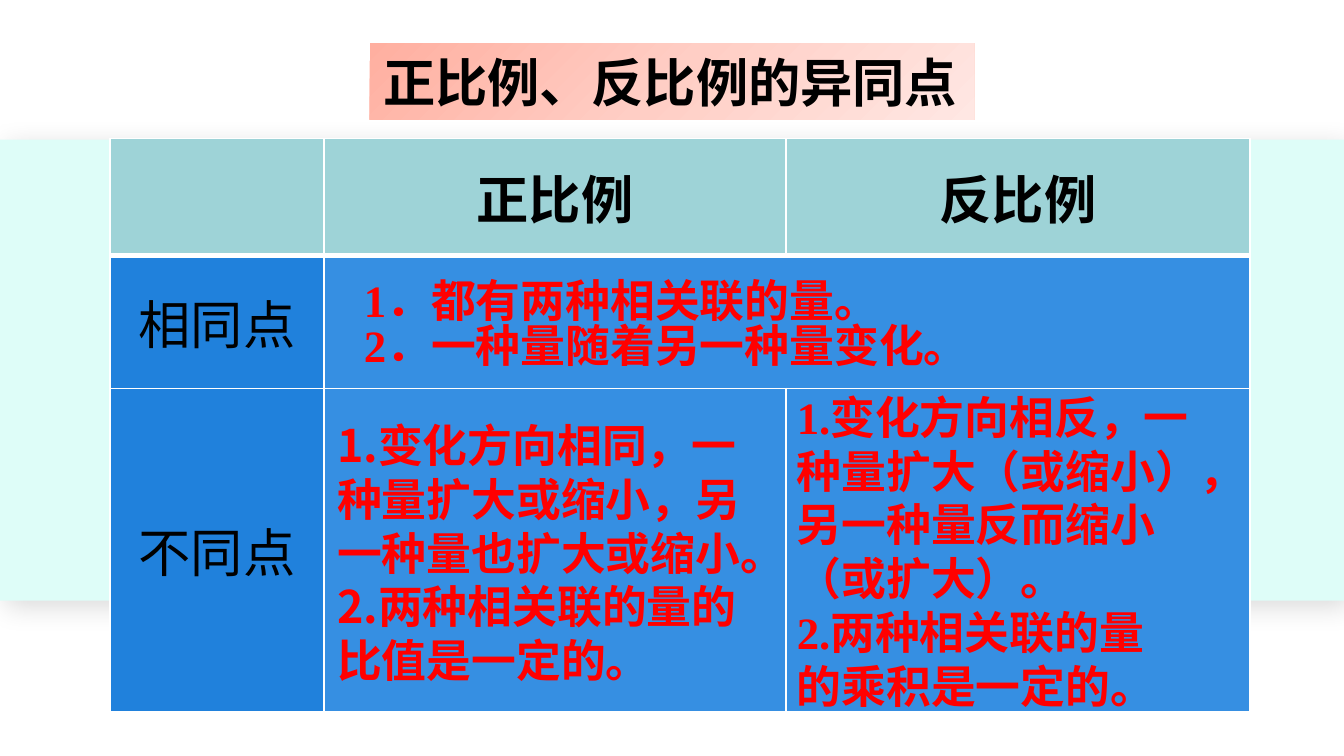
from dataclasses import dataclass

from pptx import Presentation
from pptx.dml.color import RGBColor
from pptx.enum.lang import MSO_LANGUAGE_ID as Lang
from pptx.enum.shapes import MSO_SHAPE as Preset
from pptx.enum.text import MSO_ANCHOR as Anchor, MSO_AUTO_SIZE as AutoSize, PP_ALIGN as Align
from pptx.oxml import parse_xml
from pptx.oxml.ns import nsdecls
from pptx.util import Inches, Pt


@dataclass(frozen=True)
class Theme:
    font: str = "Times New Roman"
    heading_size: int = 28
    answer_size: int = 24
    ink: str = "000000"
    answer: str = "FF0000"
    band: str = "DEFDF8"
    header: str = "9ED3D7"
    label: str = "2081DC"
    body: str = "368FE2"
    border: str = "FFFFFF"
    title_stops: tuple = ((0, "FFAFA0"), (50, "FFCEC5"), (100, "FFE7E3"))


@dataclass(frozen=True)
class Box:
    left: float
    top: float
    width: float
    height: float

    def emu(self):
        return tuple(Inches(n) for n in (self.left, self.top, self.width, self.height))


@dataclass(frozen=True)
class Answer:
    """Paragraphs laid over a table cell; each paragraph is a tuple of lines."""
    box: Box
    paragraphs: tuple
    line_pitch: int | None = None
    align: Align = Align.LEFT
    numbered: bool = False


THEME = Theme()
SLIDE_WIDTH = 10
SLIDE_HEIGHT = SLIDE_WIDTH * 9 / 16
COLUMNS = (1.59, 3.44, 3.45)
ROWS = (0.87, 0.99, 2.41)
LABELS = (("", "正比例", "反比例"), ("相同点", "", ""), ("不同点", "", ""))
ANSWERS = (
    Answer(Box(2.61, 2.05, 6.04, 0.77),
           (("1．都有两种相关联的量。",), ("2．一种量随着另一种量变化。",)),
           line_pitch=24, align=Align.JUSTIFY),
    Answer(Box(2.41, 3.06, 3.41, 2.12),
           (("变化方向相同，一种量扩大或缩小，另一种量也扩大或缩小。",),
            ("两种相关联的量的比值是一定的。",)),
           numbered=True),
    Answer(Box(5.83, 2.85, 3.48, 2.42),
           (("1.变化方向相反，一",),
            ("种量扩大（或缩小），另一种量反而缩小（或扩大）。",),
            ("2.两种相关联的量", "的乘积是一定的。"))),
)


def add_run(paragraph, text: str, size: int, color: str, bold: bool = True) -> None:
    run = paragraph.add_run()
    run.text = text
    font = run.font
    font.name, font.size, font.bold = THEME.font, Pt(size), bold
    font.color.rgb = RGBColor.from_string(color)
    font.language_id = Lang.SIMPLIFIED_CHINESE


def fill_solid(target, color: str) -> None:
    target.fill.solid()
    target.fill.fore_color.rgb = RGBColor.from_string(color)


def draw_band(slide) -> None:
    band = slide.shapes.add_shape(Preset.RECTANGLE, *Box(0, 1.04, SLIDE_WIDTH, 3.43).emu())
    fill_solid(band, THEME.band)
    band.line.fill.background()
    band._element.spPr.append(parse_xml(
        f'<a:effectLst {nsdecls("a")}><a:outerShdw blurRad="{Pt(15)}" dist="{Pt(5)}" '
        'dir="2700000" algn="ctr" rotWithShape="0"><a:srgbClr val="000000">'
        '<a:alpha val="15000"/></a:srgbClr></a:outerShdw></a:effectLst>'))


def draw_title(slide, text: str) -> None:
    title = slide.shapes.title
    title.left, title.top, title.width, title.height = Box(2.75, 0.32, 4.5, 0.57).emu()
    stops = "".join(f'<a:gs pos="{at * 1000}"><a:srgbClr val="{color}"/></a:gs>'
                    for at, color in THEME.title_stops)
    title._element.spPr.append(parse_xml(
        f'<a:gradFill {nsdecls("a")} rotWithShape="1"><a:gsLst>{stops}</a:gsLst>'
        '<a:lin ang="2700000" scaled="0"/></a:gradFill>'))
    frame = title.text_frame
    frame.word_wrap = False
    frame.auto_size = AutoSize.NONE
    frame.vertical_anchor = Anchor.TOP
    frame.paragraphs[0].alignment = Align.LEFT
    add_run(frame.paragraphs[0], text, THEME.heading_size, THEME.ink)


def set_borders(cell, bottom: int) -> None:
    properties = cell._tc.get_or_add_tcPr()
    for index, (side, width) in enumerate((("L", 1), ("R", 1), ("T", 1), ("B", bottom))):
        properties.insert(index, parse_xml(
            f'<a:ln{side} {nsdecls("a")} w="{Pt(width)}"><a:solidFill>'
            f'<a:srgbClr val="{THEME.border}"/></a:solidFill></a:ln{side}>'))


def draw_table(slide) -> None:
    box = Box(0.82, 1.03, sum(COLUMNS), sum(ROWS))
    table = slide.shapes.add_table(len(ROWS), len(COLUMNS), *box.emu()).table
    for column, width in zip(table.columns, COLUMNS):
        column.width = Inches(width)
    for row, height in zip(table.rows, ROWS):
        row.height = Inches(height)
    for r, labels in enumerate(LABELS):
        for c, label in enumerate(labels):
            cell = table.cell(r, c)
            is_header = r == 0
            side_color = THEME.label if c == 0 else THEME.body
            fill_solid(cell, THEME.header if is_header else side_color)
            set_borders(cell, bottom=3 if is_header else 1)
            cell.vertical_anchor = Anchor.MIDDLE
            if label:
                paragraph = cell.text_frame.paragraphs[0]
                paragraph.alignment = Align.CENTER
                add_run(paragraph, label, THEME.heading_size, THEME.ink, bold=is_header)
    table.cell(1, 1).merge(table.cell(1, 2))


def number_paragraph(paragraph) -> None:
    properties = paragraph._p.get_or_add_pPr()
    properties.set("marL", "0")
    properties.set("indent", "0")
    for element in ('buFont {} typeface="+mj-ea"', 'buAutoNum {} type="arabicPeriod"'):
        properties.append(parse_xml(f'<a:{element.format(nsdecls("a"))}/>'))
    properties.append(parse_xml(
        f'<a:tabLst {nsdecls("a")}><a:tab pos="{Inches(0.25)}" algn="l"/></a:tabLst>'))


def draw_answer(slide, answer: Answer) -> None:
    frame = slide.shapes.add_textbox(*answer.box.emu()).text_frame
    frame.word_wrap = True
    for index, lines in enumerate(answer.paragraphs):
        paragraph = frame.add_paragraph() if index else frame.paragraphs[0]
        paragraph.alignment = answer.align
        if answer.line_pitch:
            paragraph.line_spacing = Pt(answer.line_pitch)
        if answer.numbered:
            number_paragraph(paragraph)
        for position, line in enumerate(lines):
            if position:
                paragraph.add_line_break()
            add_run(paragraph, line, THEME.answer_size, THEME.answer)


def main() -> None:
    deck = Presentation()
    deck.slide_width, deck.slide_height = Inches(SLIDE_WIDTH), Inches(SLIDE_HEIGHT)
    title_only = deck.slide_layouts[5]
    slide = deck.slides.add_slide(title_only)
    draw_band(slide)
    draw_title(slide, "正比例、反比例的异同点")
    draw_table(slide)
    for answer in ANSWERS:
        draw_answer(slide, answer)
    deck.save("out.pptx")


if __name__ == "__main__":
    main()
